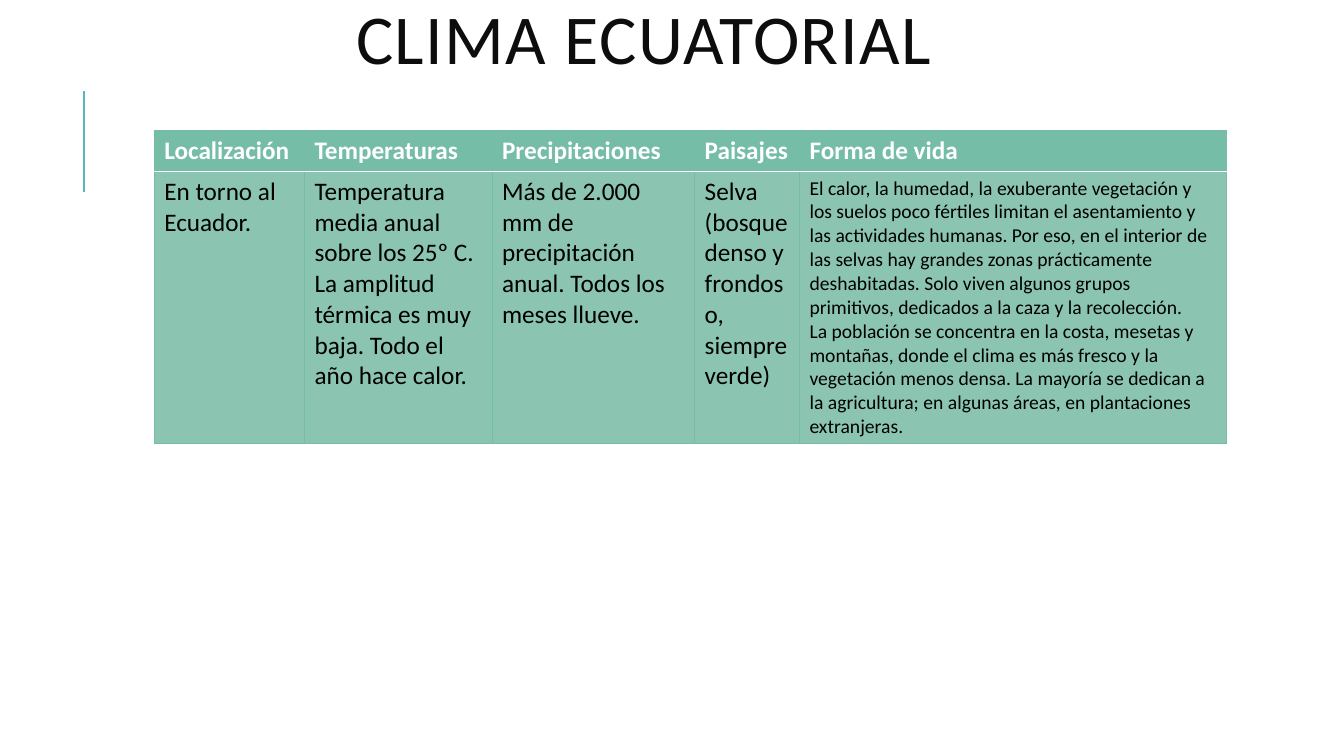
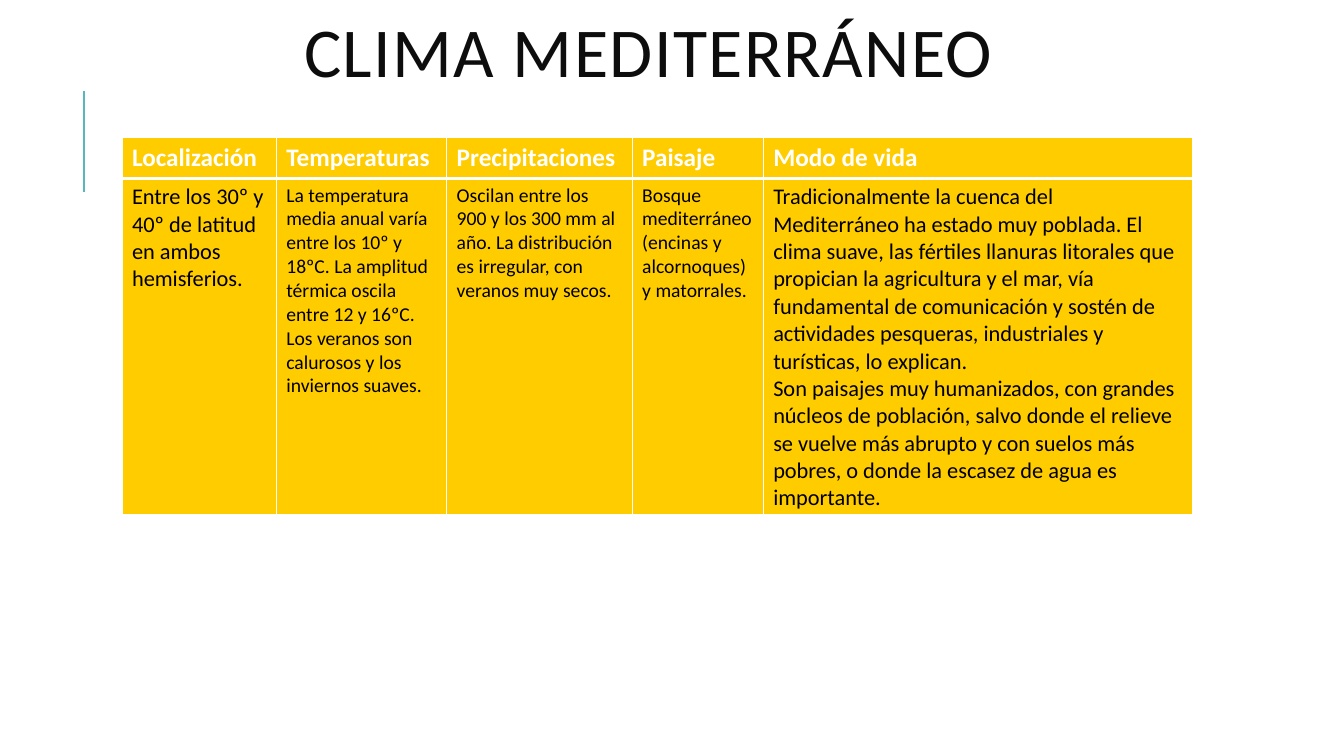
"""Builds two slides that describe the equatorial and Mediterranean climates."""
from lxml.etree import SubElement
from pptx import Presentation
from pptx.dml.color import RGBColor
from pptx.enum.shapes import MSO_CONNECTOR
from pptx.enum.text import MSO_ANCHOR, PP_ALIGN
from pptx.oxml.ns import qn
from pptx.util import Inches, Pt

WHITE = RGBColor(0xFF, 0xFF, 0xFF)
BLACK = RGBColor(0x00, 0x00, 0x00)
TITLE_INK = RGBColor(0x0D, 0x0D, 0x0D)
TEAL = RGBColor(0x58, 0xB6, 0xC0)
GREEN = RGBColor(0x75, 0xBD, 0xA7)
PALE_GREEN = RGBColor(0x8B, 0xC5, 0xB2)
YELLOW = RGBColor(0xFF, 0xCC, 0x00)
FONT = "Calibri"
CONTENT_WIDTH = 10.63
HEADER_HEIGHT = 0.41
TITLE_FORMAT = {"name": FONT, "size": Pt(50), "bold": False}
HEADER_FORMAT = {"name": FONT, "size": Pt(18), "bold": True}

CLIMATES = [
    {
        "title": "CLIMA ECUATORIAL",
        "title_box": (1.07, 0, 0.88),
        "table_corner": (1.53, 1.29),
        "widths": [1.49, 1.86, 2.01, 1.04, 4.24],
        "body_height": 2.7,
        "fills": (GREEN, PALE_GREEN),
        "grid": (GREEN, 0.75),
        "header_rule": (WHITE, 1.25),
        "columns": [
            ("Localización", 18, ["En torno al Ecuador."]),
            ("Temperaturas", 18, [
                "Temperatura media anual sobre los 25º C. La amplitud térmica es muy baja. "
                "Todo el año hace calor."]),
            ("Precipitaciones", 18, [
                "Más de 2.000 mm de precipitación anual. Todos los meses llueve."]),
            ("Paisajes", 18, ["Selva (bosque denso y frondoso, siempre verde)"]),
            ("Forma de vida", 14, [
                "El calor, la humedad, la exuberante vegetación y los suelos poco fértiles "
                "limitan el asentamiento y las actividades humanas. Por eso, en el interior "
                "de las selvas hay grandes zonas prácticamente deshabitadas. Solo viven "
                "algunos grupos primitivos, dedicados a la caza y la recolección.",
                "La población se concentra en la costa, mesetas y montañas, donde el clima "
                "es más fresco y la vegetación menos densa. La mayoría se dedican a la "
                "agricultura; en algunas áreas, en plantaciones extranjeras."]),
        ],
    },
    {
        "title": "CLIMA MEDITERRÁNEO",
        "title_box": (1.12, 0.15, 0.83),
        "table_corner": (1.21, 1.36),
        "widths": [1.53, 1.69, 1.84, 1.3, 4.26],
        "body_height": 3.34,
        "fills": (YELLOW, YELLOW),
        "grid": (WHITE, 1),
        "header_rule": (WHITE, 3),
        "columns": [
            ("Localización", 16, ["Entre los 30º y 40º de latitud en ambos hemisferios."]),
            ("Temperaturas", 14, [
                "La temperatura media anual varía entre los 10º y 18ºC. La amplitud térmica "
                "oscila entre 12 y 16ºC. Los veranos son calurosos y los inviernos suaves."]),
            ("Precipitaciones", 14, [
                "Oscilan entre los 900 y los 300 mm al año. La distribución es irregular, "
                "con veranos muy secos."]),
            ("Paisaje", 14, ["Bosque mediterráneo (encinas y alcornoques) y matorrales."]),
            ("Modo de vida", 16, [
                "Tradicionalmente la cuenca del Mediterráneo ha estado muy poblada. El clima "
                "suave, las fértiles llanuras litorales que propician la agricultura y el "
                "mar, vía fundamental de comunicación y sostén de actividades pesqueras, "
                "industriales y turísticas, lo explican.",
                "Son paisajes muy humanizados, con grandes núcleos de población, salvo donde "
                "el relieve se vuelve más abrupto y con suelos más pobres, o donde la escasez "
                "de agua es importante."]),
        ],
    },
]


def write(paragraph, text, ink, formats):
    """Adds one formatted run and returns it."""
    run = paragraph.add_run()
    run.text = text
    run.font.color.rgb = ink
    for attribute, value in formats.items():
        setattr(run.font, attribute, value)
    return run


def fill_cell(cell, texts, ink, formats, fill, borders):
    """Writes the paragraphs of a cell and sets its borders and fill."""
    cell.text_frame.text = "\n".join("" for _ in texts)
    for paragraph, text in zip(cell.text_frame.paragraphs, texts):
        write(paragraph, text, ink, formats)
    properties = cell._tc.get_or_add_tcPr()
    for side in ("lnL", "lnR", "lnT", "lnB"):
        color, points = borders[side]
        border = SubElement(properties, qn(f"a:{side}"), w=str(Pt(points)))
        SubElement(SubElement(border, qn("a:solidFill")), qn("a:srgbClr"), val=str(color))
    cell.fill.solid()
    cell.fill.fore_color.rgb = fill


deck = Presentation()
deck.slide_width, deck.slide_height = Inches(13.33), Inches(7.5)

for climate in CLIMATES:
    slide = deck.slides.add_slide(deck.slide_layouts[6])

    accent = slide.shapes.add_connector(
        MSO_CONNECTOR.STRAIGHT, Inches(0.83), Inches(1.9), Inches(0.83), Inches(0.9))
    accent.line.color.rgb = TEAL
    accent.line.width = Pt(1.5)
    SubElement(accent._element.spPr, qn("a:effectLst"))

    left, top, height = climate["title_box"]
    title = slide.shapes.add_textbox(
        Inches(left), Inches(top), Inches(CONTENT_WIDTH), Inches(height)).text_frame
    title.word_wrap = True
    title.vertical_anchor = MSO_ANCHOR.MIDDLE
    heading = title.paragraphs[0]
    heading.alignment = PP_ALIGN.CENTER
    heading.line_spacing = 0.8
    heading_run = write(heading, climate["title"], TITLE_INK, TITLE_FORMAT)
    heading_run.font._element.set("spc", "100")

    left, top = climate["table_corner"]
    body_height = climate["body_height"]
    table = slide.shapes.add_table(
        2, len(climate["columns"]), Inches(left), Inches(top),
        Inches(CONTENT_WIDTH), Inches(HEADER_HEIGHT + body_height)).table
    table.horz_banding = False
    table.rows[0].height = Inches(HEADER_HEIGHT)
    table.rows[1].height = Inches(body_height)

    grid = dict.fromkeys(("lnL", "lnR", "lnT", "lnB"), climate["grid"])
    header_borders = {**grid, "lnB": climate["header_rule"]}
    body_borders = {**grid, "lnT": climate["header_rule"]}
    header_fill, body_fill = climate["fills"]
    for index, (label, size, texts) in enumerate(climate["columns"]):
        table.columns[index].width = Inches(climate["widths"][index])
        body_format = {"name": FONT, "size": Pt(size), "bold": False}
        fill_cell(table.cell(0, index), [label], WHITE, HEADER_FORMAT, header_fill, header_borders)
        fill_cell(table.cell(1, index), texts, BLACK, body_format, body_fill, body_borders)

deck.save("out.pptx")
